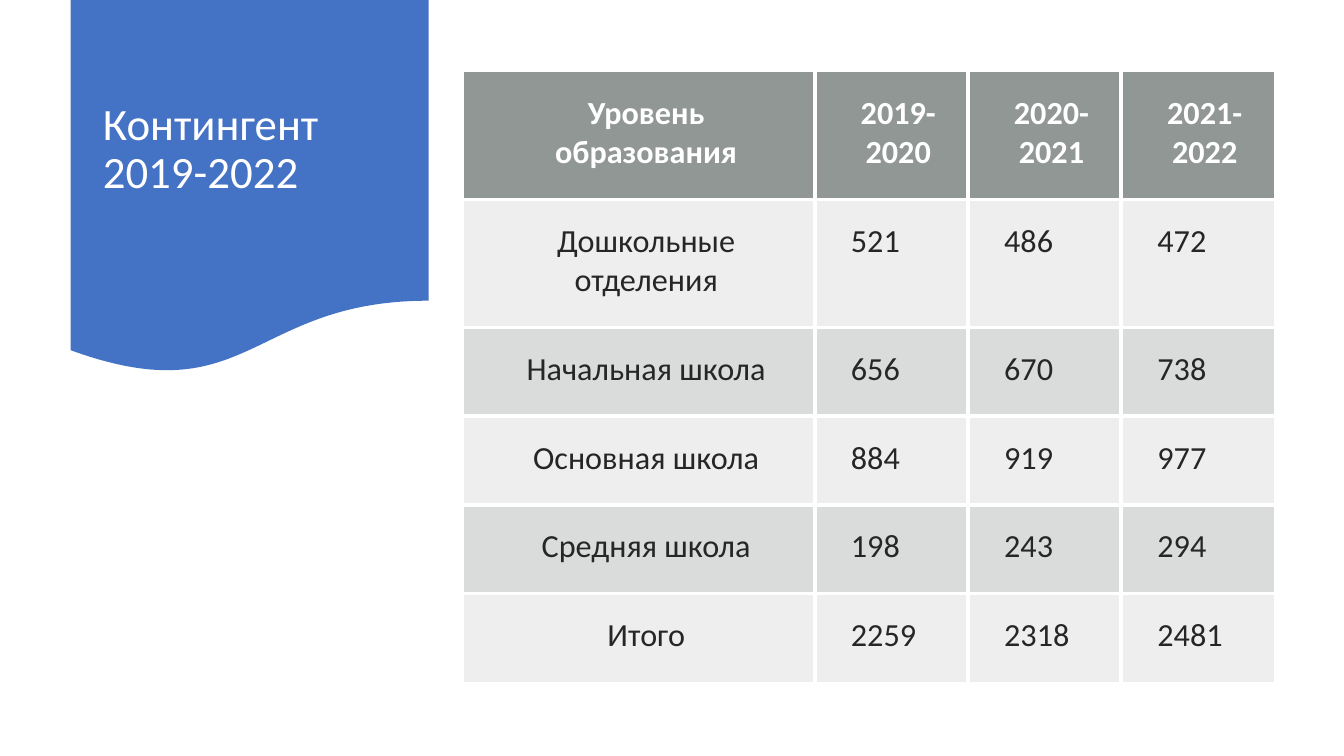
from lxml.etree import SubElement
from pptx import Presentation
from pptx.dml.color import RGBColor
from pptx.enum.shapes import MSO_SHAPE
from pptx.enum.text import MSO_ANCHOR, MSO_AUTO_SIZE, PP_ALIGN
from pptx.oxml import parse_xml
from pptx.oxml.ns import nsdecls, qn
from pptx.util import Inches, Pt

HEADER = ["Уровень образования", "2019-2020", "2020-2021", "2021-2022"]
ENROLMENT = [
    ["Дошкольные отделения", "521", "486", "472"],
    ["Начальная школа", "656", "670", "738"],
    ["Основная школа", "884", "919", "977"],
    ["Средняя школа", "198", "243", "294"],
    ["Итого", "2259", "2318", "2481"],
]
COLUMN_WIDTHS = [3.48, 1.52, 1.52, 1.52]
ROW_HEIGHTS = [1.27, 1.27, 0.88, 0.88, 0.88, 0.88]


def color(hex_value):
    return RGBColor.from_string(hex_value)


def apply(target, values):
    for name, value in values.items():
        setattr(target, name, value)


class SlideBuilder:
    font_name = "Calibri"
    white = "FFFFFF"
    accent = "4472C4"
    text_color = "262626"
    header_fill = ("636B68", 70)
    band_fills = [("878E8B", 15), ("878E8B", 30)]
    cell_format = {
        "margin_left": Inches(0.36),
        "margin_top": Inches(0.22),
        "margin_right": Inches(0.22),
        "margin_bottom": Inches(0.22),
        "vertical_anchor": MSO_ANCHOR.TOP,
    }

    def __init__(self, slide):
        self.slide = slide

    def add_text(self, paragraph, text, size, hex_value, alignment, bold=False):
        paragraph.alignment = alignment
        run = paragraph.add_run()
        run.text = text
        apply(run.font, {"name": self.font_name, "size": Pt(size), "bold": bold})
        run.font.color.rgb = color(hex_value)

    def add_title(self, text, left, top, width, height):
        title = self.slide.shapes.title
        apply(title, {"left": Inches(left), "top": Inches(top),
                      "width": Inches(width), "height": Inches(height)})
        apply(title.text_frame, {"vertical_anchor": MSO_ANCHOR.MIDDLE,
                                 "word_wrap": True,
                                 "auto_size": MSO_AUTO_SIZE.NONE})
        paragraph = title.text_frame.paragraphs[0]
        paragraph.line_spacing = 0.9
        self.add_text(paragraph, text, 32, self.white, PP_ALIGN.LEFT)

    def add_banner(self, left, top, width, height):
        """Add the wavy banner behind the title."""
        banner = self.slide.shapes.add_shape(
            MSO_SHAPE.FLOWCHART_DOCUMENT,
            Inches(left), Inches(top), Inches(width), Inches(height))
        banner.shadow.inherit = False
        banner.fill.solid()
        banner.fill.fore_color.rgb = color(self.accent)
        banner.line.fill.background()
        self.slide.shapes.title.element.addprevious(banner.element)

    def fill_cell(self, cell, hex_value, opacity):
        cell.fill.solid()
        cell.fill.fore_color.rgb = color(hex_value)
        for fill_color in cell._tc.get_or_add_tcPr().iter(qn("a:srgbClr")):
            SubElement(fill_color, qn("a:alpha"), val=str(opacity * 1000))

    def add_borders(self, cell, sides):
        """Put border lines ahead of the cell fill, as the schema requires."""
        properties = cell._tc.get_or_add_tcPr()
        for position, side in enumerate(sides):
            properties.insert(position, parse_xml(
                f'<a:ln{side} {nsdecls("a")} w="{int(Pt(3))}"><a:solidFill>'
                f'<a:srgbClr val="{self.white}"/></a:solidFill></a:ln{side}>'))

    def add_table(self, rows, left, top, widths, heights):
        table = self.slide.shapes.add_table(
            len(rows), len(widths), Inches(left), Inches(top),
            Inches(sum(widths)), Inches(sum(heights))).table
        for column, width in zip(table.columns, widths):
            column.width = Inches(width)
        for row, height in zip(table.rows, heights):
            row.height = Inches(height)
        last_row, last_column = len(rows) - 1, len(widths) - 1
        for row_index, texts in enumerate(rows):
            is_header = row_index == 0
            fill = self.header_fill if is_header else self.band_fills[(row_index - 1) % 2]
            for column_index, text in enumerate(texts):
                cell = table.cell(row_index, column_index)
                apply(cell, self.cell_format)
                self.fill_cell(cell, *fill)
                inner_sides = {"L": column_index > 0, "R": column_index < last_column,
                               "T": row_index > 0, "B": row_index < last_row}
                self.add_borders(cell, [side for side, inner in inner_sides.items() if inner])
                centered = is_header or column_index == 0
                self.add_text(cell.text_frame.paragraphs[0], text, 23,
                              self.white if is_header else self.text_color,
                              PP_ALIGN.CENTER if centered else PP_ALIGN.LEFT, is_header)


def main():
    presentation = Presentation()
    apply(presentation, {"slide_width": Inches(13.33), "slide_height": Inches(7.5)})
    title_only = presentation.slide_layouts.get_by_name("Title Only")
    builder = SlideBuilder(presentation.slides.add_slide(title_only))
    builder.add_banner(0.7, 0, 3.55, 3.72)
    builder.add_title("Контингент 2019-2022", 0.92, 0.19, 3.11, 2.59)
    builder.add_table([HEADER, *ENROLMENT], 4.6, 0.71, COLUMN_WIDTHS, ROW_HEIGHTS)
    presentation.save("out.pptx")


if __name__ == "__main__":
    main()
